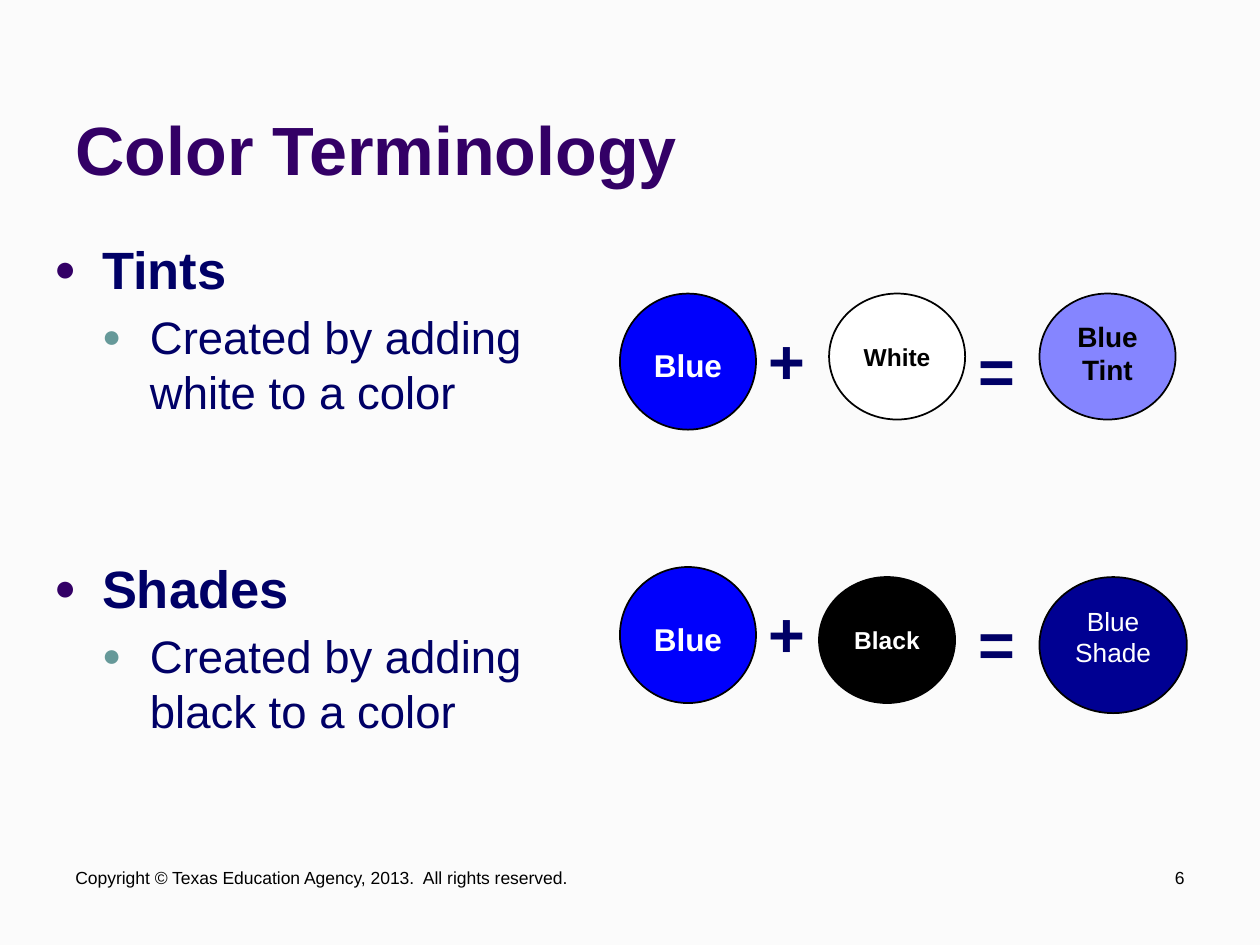
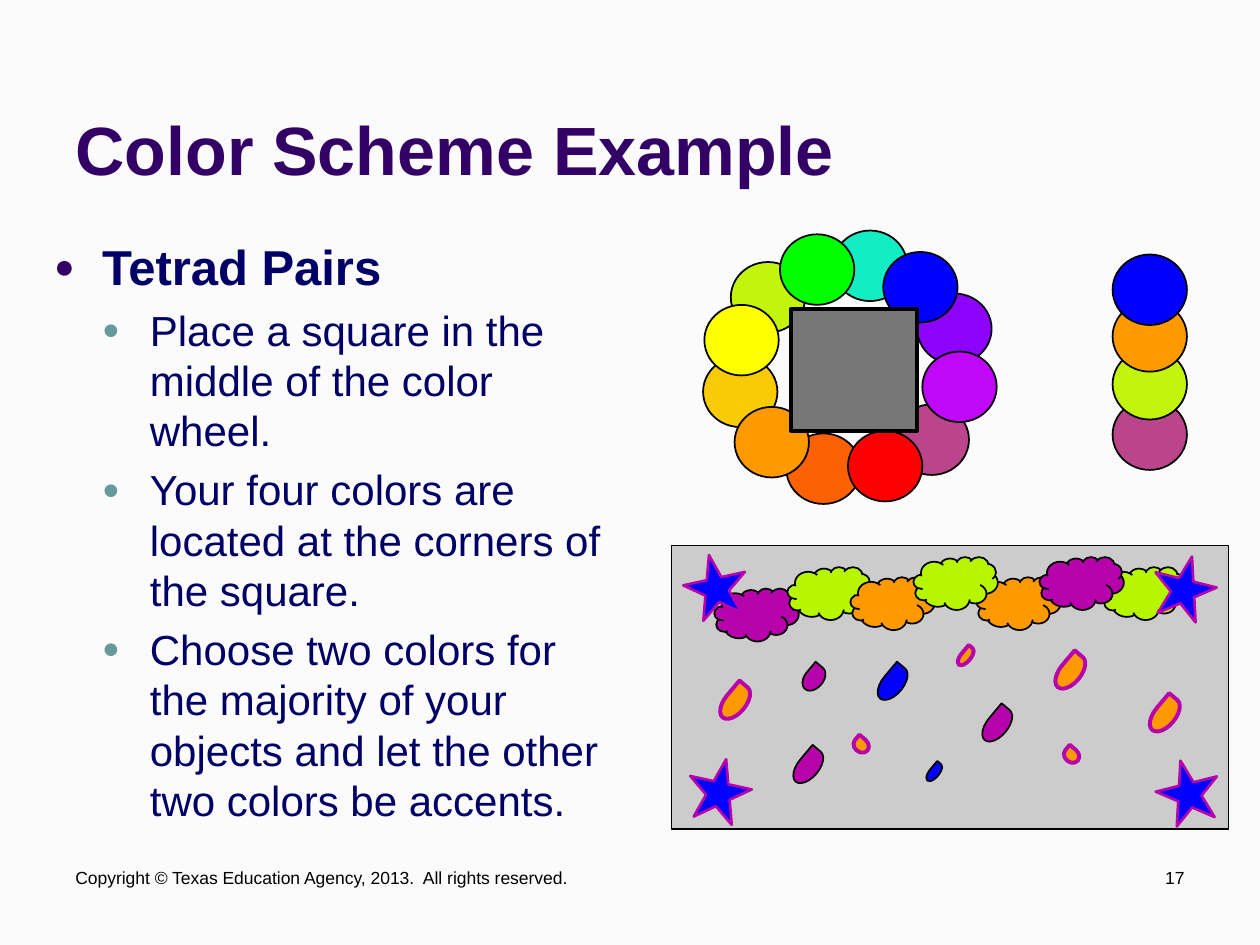
"""Build two slides on colour terminology and the tetrad colour scheme."""
import lxml.etree
import pptx
import pptx.dml.color
import pptx.enum.shapes
import pptx.enum.text
import pptx.oxml.ns
import pptx.util

RGB = pptx.dml.color.RGBColor
SHAPE = pptx.enum.shapes.MSO_SHAPE
ALIGN = pptx.enum.text.PP_ALIGN
ANCHOR = pptx.enum.text.MSO_ANCHOR
Pt = pptx.util.Pt

PAPER = RGB(0xFB, 0xFB, 0xFB)
INDIGO = RGB(0x33, 0x00, 0x66)
NAVY = RGB(0x00, 0x00, 0x66)
TEAL = RGB(0x66, 0x99, 0x99)
BLACK = RGB(0x00, 0x00, 0x00)
WHITE = RGB(0xFF, 0xFF, 0xFF)
INK_BLUE = RGB(0x00, 0x00, 0xFC)
BLUE_TINT = RGB(0x85, 0x85, 0xFF)
BLUE_SHADE = RGB(0x00, 0x00, 0x92)
BLUE = RGB(0x00, 0x00, 0xFF)
GREEN = RGB(0x00, 0xFF, 0x00)
YELLOW = RGB(0xFF, 0xFF, 0x00)
RED = RGB(0xFF, 0x00, 0x00)
ORANGE = RGB(0xFF, 0x99, 0x00)
RED_ORANGE = RGB(0xFC, 0x62, 0x04)
AMBER = RGB(0xF9, 0xCB, 0x07)
LIME = RGB(0xC2, 0xF4, 0x0C)
AQUA = RGB(0x14, 0xEC, 0xC3)
VIOLET = RGB(0x8C, 0x04, 0xFC)
PURPLE = RGB(0xBF, 0x07, 0xF9)
ROSE = RGB(0xBB, 0x45, 0x8B)
MAGENTA = RGB(0xB7, 0x01, 0xAA)
LEAF = RGB(0xB6, 0xF6, 0x00)
GRAY = RGB(0x77, 0x77, 0x77)
SILVER = RGB(0xCC, 0xCC, 0xCC)

FONT = "Arial"
COLUMNS, ROWS = 100, 75
COPYRIGHT = "Copyright © Texas Education Agency, 2013.  All rights reserved."


def write(paragraph, text, size=10, color=BLACK, bold=False, align=ALIGN.LEFT):
    """Add one formatted run to a paragraph."""
    paragraph.alignment = align
    run = paragraph.add_run()
    run.text = text
    run.font.name, run.font.size = FONT, Pt(size)
    run.font.bold, run.font.color.rgb = bold, color


class Deck:
    """Hold the shared style and the current slide."""

    def __init__(self):
        """Start a 10 by 7.5 inch presentation on the paper colour."""
        self.prs = pptx.Presentation()
        self.prs.slide_width = pptx.util.Inches(10)
        self.prs.slide_height = pptx.util.Inches(7.5)
        background = self.prs.slide_master.background.fill
        background.solid()
        background.fore_color.rgb = PAPER

    def grid(self, left, top, width, height):
        """Turn columns and rows into lengths."""
        column = self.prs.slide_width / COLUMNS
        row = self.prs.slide_height / ROWS
        return [round(n * unit) for n, unit in
                ((left, column), (top, row), (width, column), (height, row))]

    def place(self, holder, *cells):
        """Move a placeholder to grid cells and return its text frame."""
        holder.left, holder.top, holder.width, holder.height = self.grid(*cells)
        holder.text_frame.auto_size = pptx.enum.text.MSO_AUTO_SIZE.NONE
        return holder.text_frame

    def new_slide(self, heading, number):
        """Add a slide with its heading and footers."""
        self.slide = self.prs.slides.add_slide(self.prs.slide_layouts[1])
        frame = self.place(self.slide.shapes.title, 5, 1.3, 68.3, 14.2)
        frame.vertical_anchor = ANCHOR.BOTTOM
        write(frame.paragraphs[0], heading, size=39, color=INDIGO, bold=True)
        self.label(COPYRIGHT, 5, 68.3, 50, 5)
        self.label(str(number), 88.3, 68.3, 6.7, 5, align=ALIGN.RIGHT)

    def label(self, text, *cells, **style):
        """Add a text box with one line."""
        frame = self.slide.shapes.add_textbox(*self.grid(*cells)).text_frame
        frame.word_wrap = True
        write(frame.paragraphs[0], text, **style)

    def outline(self, items, height, sizes, topic_gap):
        """Fill the body with (level, text) bullets."""
        frame = self.place(self.slide.placeholders[1], 3.3, 18.3, 45.8, height)
        frame.vertical_anchor = ANCHOR.TOP
        for index, (level, text) in enumerate(items):
            paragraph = frame.add_paragraph() if index else frame.paragraphs[0]
            paragraph.level = level
            if index:
                paragraph.space_before = Pt(sizes[1] * 0.2 if level else topic_gap)
            else:
                paragraph.space_before = Pt(0)
            self.bullet(paragraph, level)
            write(paragraph, text, size=sizes[level], color=NAVY, bold=level == 0)

    def bullet(self, paragraph, level):
        """Give a paragraph a round bullet and hanging indent."""
        hang = pptx.util.Inches(0.38)
        props = paragraph._p.get_or_add_pPr()
        props.set("marL", str(hang * (level + 1)))
        props.set("indent", str(-hang))
        qn = pptx.oxml.ns.qn
        tone = lxml.etree.SubElement(props, qn("a:buClr"))
        lxml.etree.SubElement(tone, qn("a:srgbClr"), val=str(TEAL if level else INDIGO))
        lxml.etree.SubElement(props, qn("a:buSzPct"), val="70000")
        lxml.etree.SubElement(props, qn("a:buChar"), char="●")

    def shape(self, kind, fill, *cells, line=BLACK, weight=1, turn=0):
        """Add a filled and outlined preset shape."""
        shape = self.slide.shapes.add_shape(kind, *self.grid(*cells))
        shape.shadow.inherit = False
        shape.fill.solid()
        shape.fill.fore_color.rgb = fill
        shape.line.color.rgb, shape.line.width = line, Pt(weight)
        shape.rotation = turn
        return shape

    def swatch(self, text, fill, *cells, rise=0, **style):
        """Add a colour circle whose text sits off centre by a rise in points."""
        frame = self.shape(SHAPE.OVAL, fill, *cells).text_frame
        frame.word_wrap = True
        frame.vertical_anchor = ANCHOR.MIDDLE
        frame.margin_left = frame.margin_right = 0
        frame.margin_top, frame.margin_bottom = Pt(max(-rise, 0) * 2), Pt(max(rise, 0) * 2)
        write(frame.paragraphs[0], text, align=ALIGN.CENTER, **style)


def terminology(deck):
    """Show how tints and shades are mixed."""
    deck.new_slide("Color Terminology", 6)
    deck.outline([
        (0, "Tints"), (1, "Created by adding white to a color"),
        (0, "Shades"), (1, "Created by adding black to a color"),
    ], 45, sizes=(30, 26), topic_gap=79)
    for top in (23.3, 45):
        deck.swatch("Blue", INK_BLUE, 49.2, top, 10.8, 10.8, rise=-2,
                    size=18, color=WHITE, bold=True)
        for sign, left, drop in (("+", 60, 1.7), ("=", 76.7, 2.5)):
            deck.label(sign, left, top + drop, 6.7, 7.1, size=36, color=NAVY, bold=True)
    deck.swatch("White", WHITE, 65.8, 23.3, 10.8, 10, size=14, bold=True)
    deck.swatch("Black", BLACK, 65, 45.8, 10.8, 10, size=14, color=WHITE, bold=True)
    deck.swatch("Blue Tint", BLUE_TINT, 82.5, 23.3, 10.8, 10, rise=2, size=16, bold=True)
    deck.swatch("Blue Shade", BLUE_SHADE, 82.5, 45.8, 11.7, 10.8, rise=5,
                size=15, color=WHITE)


def color_wheel(deck):
    """Draw the wheel, its square and the four chosen colours."""
    wheel = [
        (RED_ORANGE, 62.4, 34.4), (AMBER, 55.8, 28.3), (LIME, 58, 20.8),
        (AQUA, 66.1, 18.3), (VIOLET, 72.8, 23.3), (ROSE, 71, 32.1),
        (PURPLE, 73.2, 27.9), (BLUE, 70.1, 20), (GREEN, 61.9, 18.6),
        (YELLOW, 55.9, 24.2), (RED, 67.3, 34.2), (ORANGE, 58.3, 32.3),
    ]
    tetrad = [(ROSE, 88.3, 31.7), (LIME, 88.3, 27.7), (ORANGE, 88.3, 23.9), (BLUE, 88.3, 20.2)]
    for fill, left, top in wheel + tetrad:
        deck.shape(SHAPE.OVAL, fill, left, top, 5.9, 5.6)
    deck.shape(SHAPE.RECTANGLE, GRAY, 62.8, 24.5, 10, 9.7, weight=2.25)


def party_scene(deck):
    """Draw the sample design with clouds, stars and drops."""
    deck.shape(SHAPE.RECTANGLE, SILVER, 53.3, 43.3, 44.2, 22.5)
    for fill, left, top in (
            (MAGENTA, 56.7, 46.7), (LEAF, 62.5, 45), (ORANGE, 67.5, 45.8),
            (ORANGE, 77.5, 45.8), (LEAF, 72.5, 44.2), (LEAF, 87.5, 45),
            (MAGENTA, 82.5, 44.2)):
        deck.shape(SHAPE.CLOUD, fill, left, top, 6.7, 4.2)
    for left, top, turn in ((54.6, 60.2, 12.3), (91.8, 60.3, 346),
                            (54.3, 44, 347.7), (91.5, 44.1, 14)):
        deck.shape(SHAPE.STAR_5_POINT, INK_BLUE, left, top, 5, 5,
                   line=MAGENTA, weight=1.5, turn=turn)
    large, medium, round_drop, slim = (3.1, 1.7), (2.2, 1.5), (1.1, 1.3), (1.7, 0.8)
    for fill, left, top, size in (
            (ORANGE, 56.8, 54.9, large), (MAGENTA, 62.6, 60, large),
            (INK_BLUE, 69.3, 53.4, large), (MAGENTA, 77.6, 56.7, large),
            (ORANGE, 83.4, 52.5, large), (ORANGE, 90.9, 55.9, large),
            (MAGENTA, 63.5, 53.1, medium), (ORANGE, 67.8, 58.5, round_drop),
            (INK_BLUE, 73.3, 60.9, slim), (ORANGE, 75.8, 51.7, slim),
            (ORANGE, 84.5, 59.3, round_drop)):
        line, weight = (MAGENTA, 2.25) if fill == ORANGE else (BLACK, 1)
        deck.shape(SHAPE.TEAR, fill, left, top, *size, line=line, weight=weight, turn=310)


def scheme_example(deck):
    """Explain tetrad pairs beside the wheel and a sample design."""
    deck.new_slide("Color Scheme Example", 17)
    deck.outline([
        (0, "Tetrad Pairs"),
        (1, "Place a square in the middle of the color wheel."),
        (1, "Your four colors are located at the corners of the square."),
        (1, "Choose two colors for the majority of your objects "
            "and let the other two colors be accents."),
    ], 49.2, sizes=(28, 24), topic_gap=6)
    color_wheel(deck)
    party_scene(deck)


def main():
    """Build and save both slides."""
    deck = Deck()
    terminology(deck)
    scheme_example(deck)
    deck.prs.save("out.pptx")


if __name__ == "__main__":
    main()
